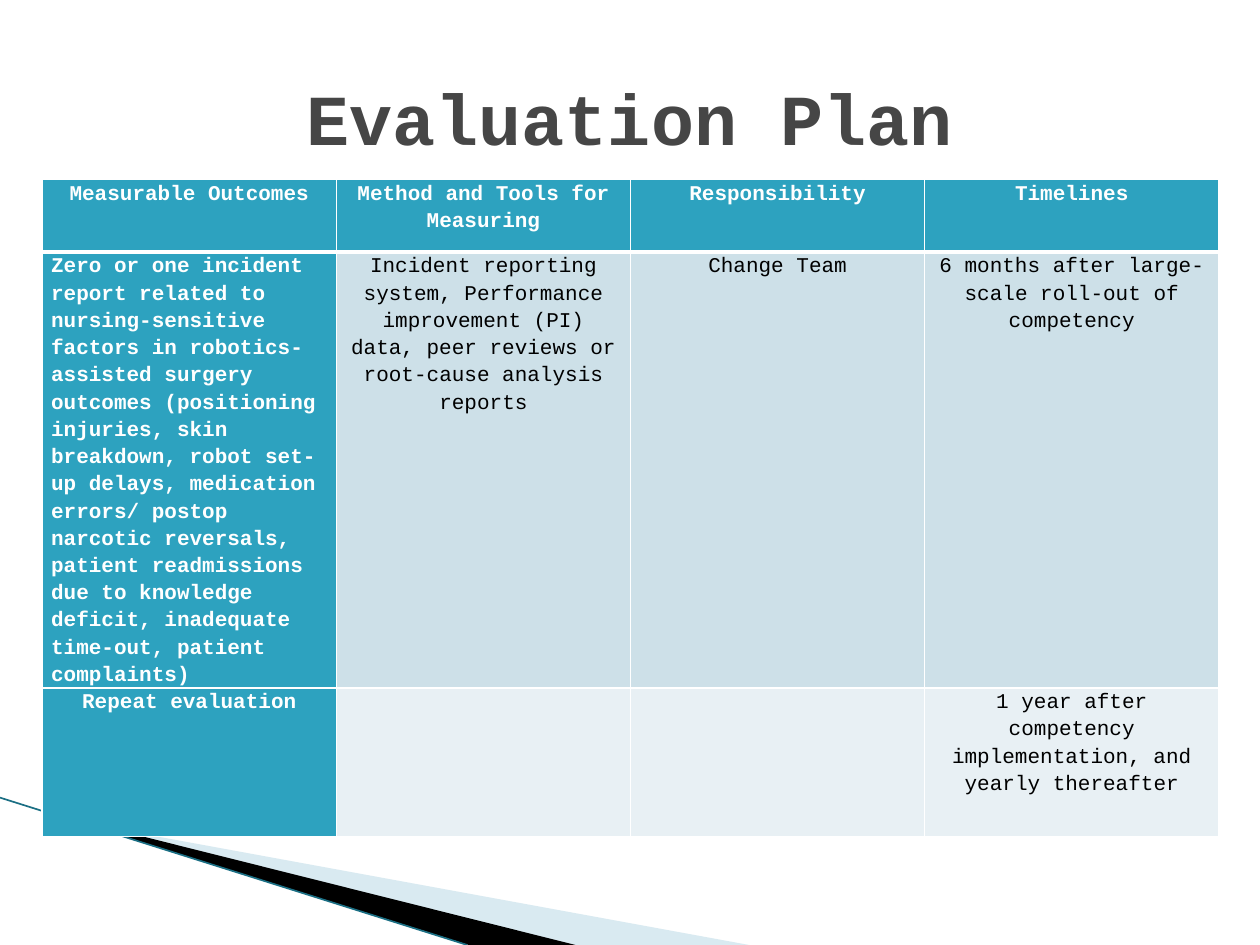
from pptx import Presentation
from pptx.dml.color import RGBColor
from pptx.enum.text import MSO_ANCHOR, PP_ALIGN
from pptx.oxml import parse_xml
from pptx.oxml.ns import nsdecls, qn
from pptx.util import Cm, Pt
from lxml.etree import SubElement

WHITE = RGBColor(0xFF, 0xFF, 0xFF)
BLACK = RGBColor(0, 0, 0)
GREY = RGBColor(0x46, 0x46, 0x46)
TEAL = RGBColor(0x2D, 0xA2, 0xBF)
DARK_TEAL = RGBColor(0x1B, 0x6F, 0x84)
PALE_TEAL = RGBColor(0xA0, 0xCB, 0xDC)
BAND_DARK = RGBColor(0xCD, 0xE0, 0xE8)
BAND_LIGHT = RGBColor(0xE8, 0xF0, 0xF4)

HEADER = ["Measurable Outcomes", "Method and Tools for Measuring", "Responsibility", "Timelines"]
INCIDENTS = [
    "Zero or one incident report related to nursing-sensitive factors in robotics-assisted surgery "
    "outcomes (positioning injuries, skin breakdown, robot set-up delays, medication errors/ postop "
    "narcotic reversals, patient readmissions due to knowledge deficit, inadequate time-out, "
    "patient complaints)",
    "Incident reporting system, Performance improvement (PI) data, peer reviews or root-cause "
    "analysis reports",
    "Change Team",
    "6 months after large-scale roll-out of competency",
]
REPEAT = ["Repeat evaluation", "", "", "1 year after competency implementation, and yearly thereafter"]


def write(frame, text, size=12, color=BLACK, bold=False, align=PP_ALIGN.CENTER, spacing=1.0):
    para = frame.paragraphs[0]
    para.alignment = align
    para.line_spacing = spacing
    span = para.add_run()
    span.text = text
    span.font.name = "Courier New"
    span.font.size = Pt(size)
    span.font.bold = bold
    span.font.color.rgb = color


class EvaluationPage:
    def __init__(self, deck):
        self.page = deck.slides.add_slide(deck.slide_layouts[6])

    def wedge(self, points, color, opacity=100):
        corners = [(Cm(x), Cm(y)) for x, y in points]
        builder = self.page.shapes.build_freeform(*corners[0])
        builder.add_line_segments(corners[1:], close=True)
        shape = builder.convert_to_shape()
        shape.shadow.inherit = False
        shape.line.fill.background()
        shape.fill.solid()
        shape.fill.fore_color.rgb = color
        if opacity < 100:
            tint = shape.fill._xPr.find(".//" + qn("a:srgbClr"))
            SubElement(tint, qn("a:alpha"), val=str(opacity * 1000))

    def line(self, start, end, color, width):
        ends = [Cm(value) for value in (*start, *end)]
        connector = self.page.shapes.add_connector(1, *ends)
        connector.line.color.rgb = color
        connector.line.width = Pt(width)
        SubElement(connector._element.spPr, qn("a:effectLst"))

    def title(self, text, left, top, width, height):
        box = self.page.shapes.add_textbox(Cm(left), Cm(top), Cm(width), Cm(height))
        box.text_frame.word_wrap = True
        box.text_frame.vertical_anchor = MSO_ANCHOR.MIDDLE
        write(box.text_frame, text, size=41, color=GREY, bold=True)

    def table(self, rows, left, top, column_width, heights, bands):
        columns = len(rows[0])
        table = self.page.shapes.add_table(
            len(rows), columns, Cm(left), Cm(top), Cm(column_width * columns), Cm(sum(heights))
        ).table
        for column in table.columns:
            column.width = Cm(column_width)
        for row_index, texts in enumerate(rows):
            table.rows[row_index].height = Cm(heights[row_index])
            for column_index, text in enumerate(texts):
                heading = row_index == 0 or column_index == 0
                cell = table.cell(row_index, column_index)
                self.style_cell(cell, TEAL if heading else bands[row_index - 1], row_index)
                if text:
                    prose = row_index == 1 and column_index == 0
                    write(cell.text_frame, text, color=WHITE if heading else BLACK, bold=heading,
                          align=PP_ALIGN.LEFT if prose else PP_ALIGN.CENTER, spacing=1.15)

    def style_cell(self, cell, color, row_index):
        cell.margin_left = cell.margin_right = Cm(0.18)
        cell.margin_top = cell.margin_bottom = 0
        cell.fill.solid()
        cell.fill.fore_color.rgb = color
        widths = {"L": 1, "R": 1, "T": 3 if row_index == 1 else 1, "B": 3 if row_index == 0 else 1}
        for position, (side, width) in enumerate(widths.items()):
            border = parse_xml(
                f'<a:ln{side} {nsdecls("a")} w="{Pt(width)}"><a:solidFill>'
                f'<a:srgbClr val="{WHITE}"/></a:solidFill></a:ln{side}>'
            )
            cell._tc.get_or_add_tcPr().insert(position, border)


def main():
    deck = Presentation()
    deck.slide_width, deck.slide_height = Cm(25.4), Cm(19.05)
    page = EvaluationPage(deck)
    page.wedge([(1.4, 16.54), (15.1, 19.05), (11.58, 19.05), (1.4, 16.51)], PALE_TEAL, opacity=40)
    page.wedge([(1.35, 16.48), (11.6, 19.05), (9.45, 19.05), (1.37, 16.51)], BLACK)
    page.line((0, 16.08), (9.42, 19.05), DARK_TEAL, 0.95)
    page.table([HEADER, INCIDENTS, REPEAT], 0.85, 3.61, 5.93, [1.47, 8.23, 3], [BAND_DARK, BAND_LIGHT])
    page.title("Evaluation Plan", 1.27, 0.76, 22.86, 3.18)
    deck.save("out.pptx")


if __name__ == "__main__":
    main()
